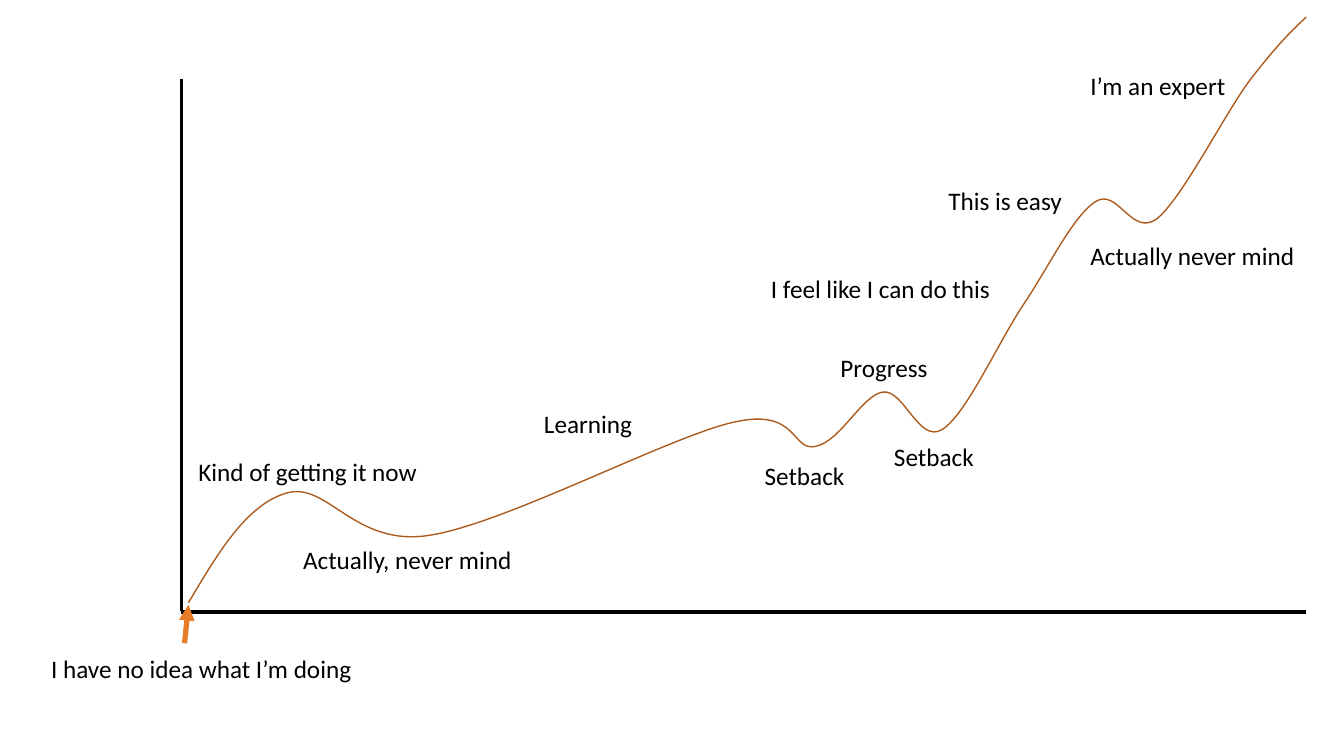
from lxml.etree import SubElement
from pptx import Presentation
from pptx.dml.color import RGBColor
from pptx.enum.shapes import MSO_CONNECTOR
from pptx.enum.text import MSO_AUTO_SIZE
from pptx.oxml.ns import qn
from pptx.util import Cm, Pt

COLORS = {"ink": "000000", "curve": "AB5C1E", "arrow": "E77D29"}
FONT = "Calibri"
LABEL_HEIGHT = 1.03

LABELS = [
    ("I have no idea what I’m doing", 1.04, 16.33, 8.76),
    ("Kind of getting it now", 4.75, 11.38, 6.43),
    ("Actually, never mind", 7.39, 13.59, 6.22),
    ("Learning", 13.46, 10.16, 3.0),
    ("Setback", 19.02, 11.48, 2.74),
    ("Progress", 20.93, 8.76, 3.07),
    ("Setback", 22.28, 11.0, 2.74),
    ("This is easy", 23.65, 4.55, 3.76),
    ("Actually never mind", 27.23, 5.94, 6.07),
    ("I feel like I can do this", 19.18, 6.76, 6.63),
    ("I’m an expert", 27.23, 1.65, 4.14),
]

AXES = [
    ((4.57, 1.98), (4.57, 15.39)),
    ((32.92, 15.42), (4.57, 15.42)),
]
START_ARROW = ((4.65, 16.21), (4.75, 15.24))

CURVE_START = (4.75, 15.19)
CURVE_SEGMENTS = [
    ((5.49, 13.94), (6.22, 12.7), (7.24, 12.42)),
    ((8.26, 12.14), (8.94, 13.79), (10.82, 13.49)),
    ((12.7, 13.21), (16.87, 11.0), (18.49, 10.64)),
    ((20.12, 10.26), (19.94, 11.38), (20.55, 11.25)),
    ((21.18, 11.13), (21.72, 9.96), (22.25, 9.88)),
    ((22.78, 9.8), (23.16, 11.2), (23.75, 10.82)),
    ((24.36, 10.44), (25.17, 8.59), (25.83, 7.62)),
    ((26.47, 6.65), (27.05, 5.44), (27.61, 5.08)),
    ((28.17, 4.72), (28.52, 5.99), (29.16, 5.51)),
    ((29.79, 5.0), (30.84, 2.92), (31.47, 2.06)),
    ((32.11, 1.22), (32.51, 0.81), (32.92, 0.43)),
]


def style_line(line, color, width):
    line.color.rgb = RGBColor.from_string(COLORS[color])
    line.width = Pt(width)


def add_line(slide, start, end, color, width):
    connector = slide.shapes.add_connector(
        MSO_CONNECTOR.STRAIGHT, *map(Cm, start + end))
    style_line(connector.line, color, width)
    SubElement(connector._element.spPr, qn("a:effectLst"))
    return connector


def add_curve(slide):
    builder = slide.shapes.build_freeform(*map(Cm, CURVE_START))
    points = [tuple(map(Cm, point)) for segment in CURVE_SEGMENTS for point in segment]
    builder.add_line_segments(points, close=False)
    shape = builder.convert_to_shape()
    shape.shadow.inherit = False
    shape.fill.background()
    style_line(shape.line, "curve", 1)

    outline = next(shape._element.iter(qn("a:path")))
    steps = outline.findall(qn("a:lnTo"))
    for index in range(0, len(steps), 3):
        bezier = SubElement(outline, qn("a:cubicBezTo"))
        for step in steps[index:index + 3]:
            bezier.append(step[0])
            outline.remove(step)


def add_label(slide, text, left, top, width):
    shape = slide.shapes.add_textbox(Cm(left), Cm(top), Cm(width), Cm(LABEL_HEIGHT))
    frame = shape.text_frame
    frame.text = text
    frame.word_wrap = False
    frame.auto_size = MSO_AUTO_SIZE.SHAPE_TO_FIT_TEXT
    font = frame.paragraphs[0].runs[0].font
    font.name = FONT
    font.size = Pt(18)
    font.color.rgb = RGBColor.from_string(COLORS["ink"])


def main():
    presentation = Presentation()
    presentation.slide_width = Cm(33.87)
    presentation.slide_height = Cm(19.05)
    slide = presentation.slides.add_slide(presentation.slide_layouts[6])

    for start, end in AXES:
        add_line(slide, start, end, "ink", 2.25)
    add_curve(slide)
    for label in LABELS:
        add_label(slide, *label)
    arrow = add_line(slide, *START_ARROW, "arrow", 3.75)
    SubElement(arrow.line._get_or_add_ln(), qn("a:tailEnd"), type="triangle")

    presentation.save("out.pptx")


if __name__ == "__main__":
    main()
